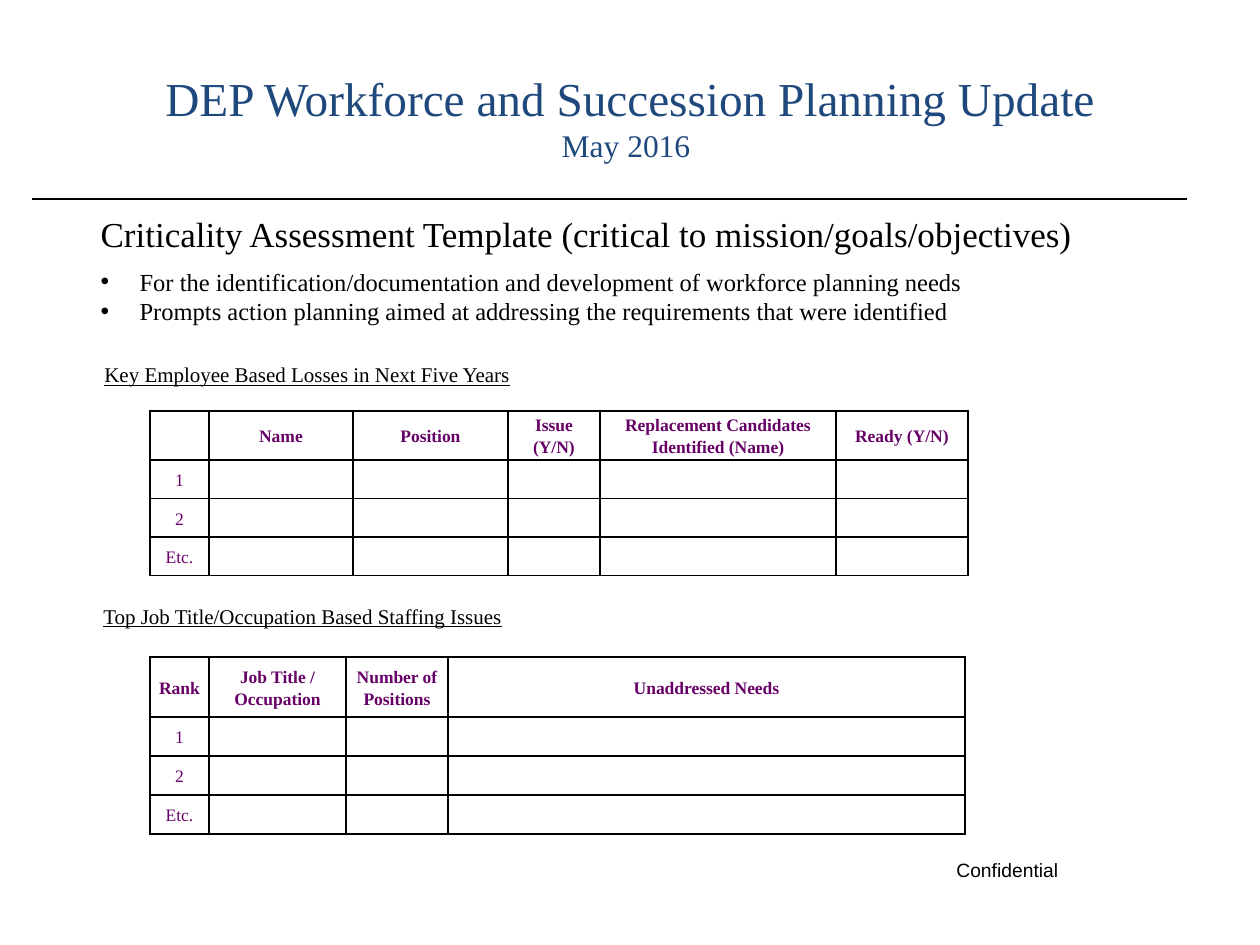
from lxml.etree import SubElement
from pptx import Presentation
from pptx.dml.color import RGBColor
from pptx.enum.shapes import MSO_CONNECTOR as Connector
from pptx.enum.text import MSO_ANCHOR as Anchor, MSO_AUTO_SIZE as AutoSize, PP_ALIGN as Align
from pptx.oxml.ns import qn
from pptx.util import Pt

SCALE = 914400 / 126
COLORS = {"ink": "000000", "title": "1F497D", "table": "660066"}
SERIF, SANS = "Times New Roman", "Arial"

TITLE = [("DEP Workforce and Succession Planning Update", 27), ("May 2016 ", 18)]
HEADING = "Criticality Assessment Template (critical to mission/goals/objectives)"
BULLETS = [
    "For the identification/documentation and development of workforce planning needs",
    "Prompts action planning aimed at addressing the requirements that were identified",
]
LABELS = [
    ("Key Employee Based Losses in Next Five Years", (92, 352, 440, 42), SERIF, 12, True, 1.15),
    ("Top Job Title/Occupation Based Staffing Issues", (91, 597, 440, 38), SERIF, 12, True, 1),
    ("Confidential", (944, 852, 140, 37), SANS, 11, False, 1),
]
ROW_NAMES = ["1", "2", "Etc."]
TABLES = [
    {
        "at": (150, 411),
        "header": ["", "Name", "Position", "Issue (Y/N)",
                   "Replacement Candidates Identified (Name)", "Ready (Y/N)"],
        "widths": [59, 144, 155, 92, 236, 132],
        "heights": [49, 38, 38, 38],
    },
    {
        "at": (150, 657),
        "header": ["Rank", "Job Title / Occupation", "Number of Positions", "Unaddressed Needs"],
        "widths": [59, 137, 102, 517],
        "heights": [60, 39, 39, 39],
    },
]


def px(value):
    return round(value * SCALE)


def place(shape, *frame):
    for name, value in zip(("left", "top", "width", "height"), frame):
        setattr(shape, name, px(value))


def add_span(para, text, size, color="ink", font=SERIF, **formats):
    span = para.add_run()
    span.text = text
    for name, value in {"name": font, "size": Pt(size), **formats}.items():
        setattr(span.font, name, value)
    span.font.color.rgb = RGBColor.from_string(COLORS[color])


def set_frame(frame, anchor):
    frame.word_wrap = True
    frame.auto_size = AutoSize.NONE
    frame.vertical_anchor = anchor


def set_bullet(para, char, indent):
    props = para._p.get_or_add_pPr()
    props.set("marL", str(px(indent)))
    props.set("indent", str(-px(indent)))
    if char:
        SubElement(props, qn("a:buFont"), typeface=SANS)
        SubElement(props, qn("a:buChar"), char=char)
    else:
        SubElement(props, qn("a:buNone"))


def add_borders(cell):
    props = cell._tc.get_or_add_tcPr()
    for side in ("lnL", "lnR", "lnT", "lnB"):
        line = SubElement(props, qn(f"a:{side}"), w=str(Pt(1)))
        SubElement(SubElement(line, qn("a:solidFill")), qn("a:srgbClr"), val=COLORS["ink"])


def add_grid(page, at, header, widths, heights):
    frame = page.shapes.add_table(len(heights), len(widths), *map(px, (*at, sum(widths), sum(heights))))
    table = frame.table
    table.first_row = table.horz_banding = False
    for column, width in zip(table.columns, widths):
        column.width = px(width)
    for row, height in zip(table.rows, heights):
        row.height = px(height)
    blanks = [""] * (len(widths) - 1)
    rows = [header] + [[name] + blanks for name in ROW_NAMES]
    for r, texts in enumerate(rows):
        for c, text in enumerate(texts):
            cell = table.cell(r, c)
            add_borders(cell)
            cell.fill.background()
            cell.vertical_anchor = Anchor.MIDDLE
            cell.margin_left = cell.margin_right = px(9)
            cell.margin_top = cell.margin_bottom = 0
            if text:
                para = cell.text_frame.paragraphs[0]
                para.alignment = Align.CENTER
                para.line_spacing = 1.15
                add_span(para, text, 10, "table", bold=r == 0)


def main():
    deck = Presentation()
    deck.slide_width, deck.slide_height = px(1260), px(945)
    page = deck.slides.add_slide(deck.slide_layouts[1])
    title, body = page.placeholders

    rule = page.shapes.add_connector(Connector.STRAIGHT, *map(px, (32, 199, 1187, 199)))
    rule.line.width = Pt(0.75)
    rule.line.color.rgb = RGBColor.from_string(COLORS["ink"])
    SubElement(rule._element.spPr, qn("a:effectLst"))

    place(title, 63, 38, 1134, 157)
    set_frame(title.text_frame, Anchor.MIDDLE)
    para = title.text_frame.paragraphs[0]
    para.alignment = Align.CENTER
    for index, (text, size) in enumerate(TITLE):
        if index:
            para.add_line_break()
        add_span(para, text, size, "title")

    place(body, 88, 206, 1011, 150)
    set_frame(body.text_frame, Anchor.TOP)
    heading = body.text_frame.paragraphs[0]
    heading.space_before, heading.space_after = Pt(0), Pt(7)
    set_bullet(heading, None, 0)
    add_span(heading, HEADING, 20)
    for text in BULLETS:
        para = body.text_frame.add_paragraph()
        para.space_before = Pt(0)
        set_bullet(para, "•", 39)
        add_span(para, text, 14)

    for text, frame, font, size, underline, spacing in LABELS:
        box = page.shapes.add_textbox(*map(px, frame))
        set_frame(box.text_frame, Anchor.TOP)
        para = box.text_frame.paragraphs[0]
        para.line_spacing = spacing
        add_span(para, text, size, font=font, underline=underline)

    for table in TABLES:
        add_grid(page, **table)

    deck.save("out.pptx")


if __name__ == "__main__":
    main()
